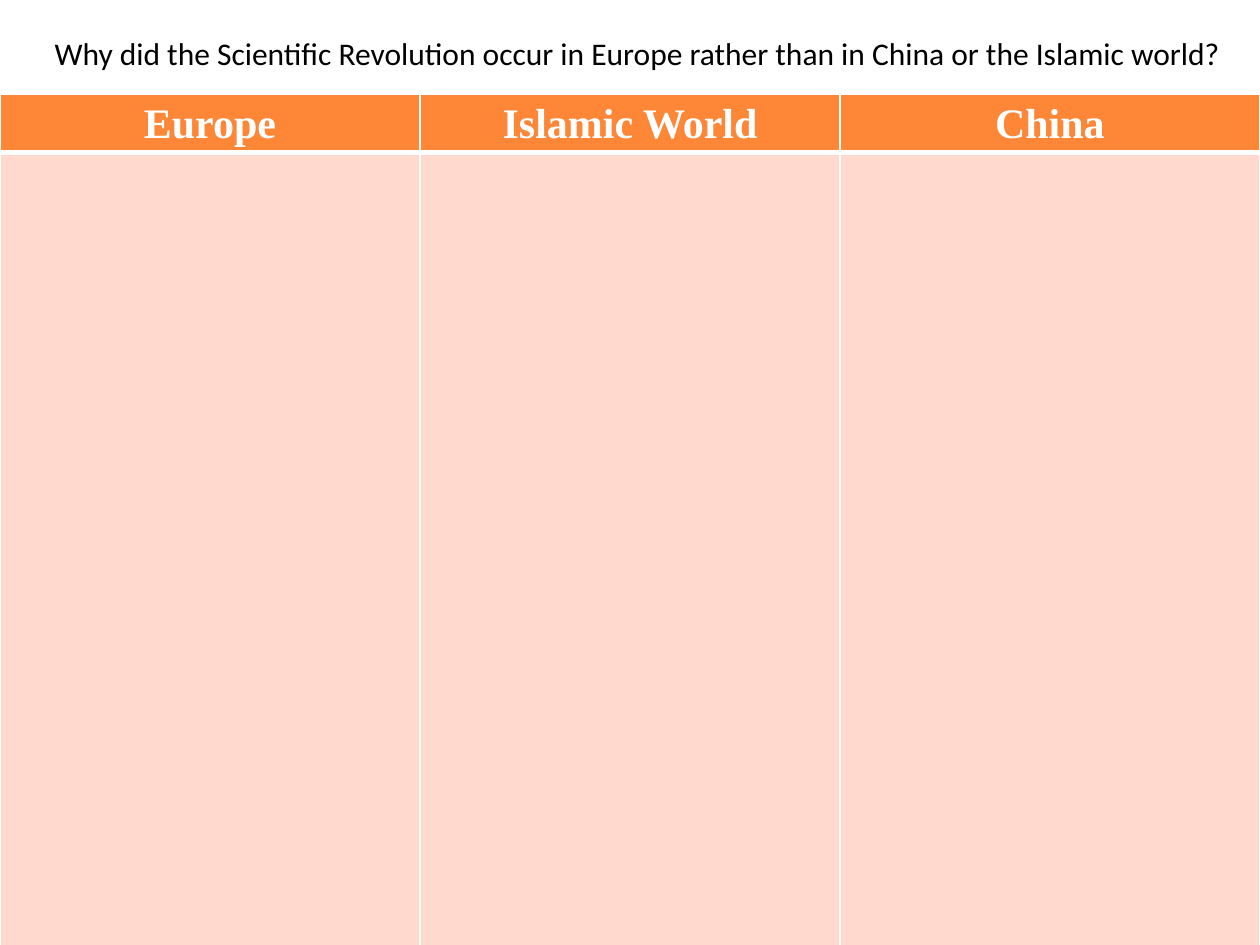
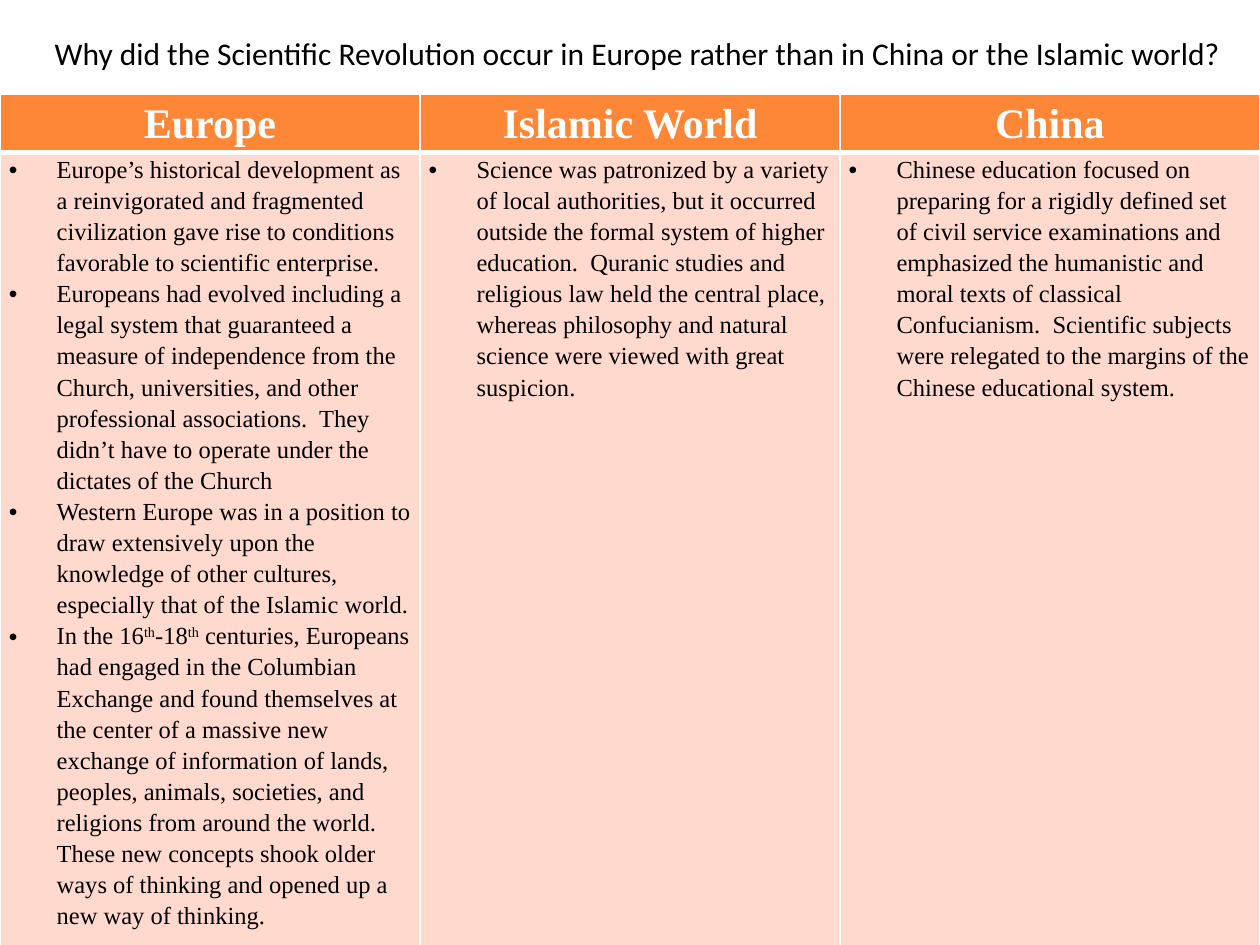
from lxml.etree import SubElement
from pptx import Presentation
from pptx.dml.color import RGBColor
from pptx.enum.text import MSO_ANCHOR, PP_ALIGN
from pptx.oxml.ns import qn
from pptx.util import Inches, Pt

# Content: text between ^ marks is superscript
TITLE = "Why did the Scientific Revolution occur in Europe rather than in China or the Islamic world?"
REGIONS = ["Europe", "Islamic World", "China"]
REASONS = [
    [
        "Europe’s historical development as a reinvigorated and fragmented civilization "
        "gave rise to conditions favorable to scientific enterprise.",
        "Europeans had evolved including a legal system that guaranteed a measure of "
        "independence from the Church, universities, and other professional associations.  "
        "They didn’t have to operate under the dictates of the Church",
        "Western Europe was in a position to draw extensively upon the knowledge of other "
        "cultures, especially that of the Islamic world.",
        "In the 16^th^-18^th^ centuries, Europeans had engaged in the Columbian Exchange and "
        "found themselves at the center of a massive new exchange of information of lands, "
        "peoples, animals, societies, and religions from around the world.  These new "
        "concepts shook older ways of thinking and opened up a new way of thinking.",
    ],
    [
        "Science was patronized by a variety of local authorities, but it occurred outside "
        "the formal system of higher education.  Quranic studies and religious law held the "
        "central place, whereas philosophy and natural science were viewed with great suspicion.",
    ],
    [
        "Chinese education focused on preparing for a rigidly defined set of civil service "
        "examinations and emphasized the humanistic and moral texts of classical "
        "Confucianism.  Scientific subjects were relegated to the margins of the Chinese "
        "educational system.",
    ],
]
SLIDES = [[[] for region in REGIONS], REASONS]

# Shared style
WHITE = RGBColor(0xFF, 0xFF, 0xFF)
BLACK = RGBColor(0x00, 0x00, 0x00)
ORANGE = RGBColor(0xFE, 0x86, 0x37)
PEACH = RGBColor(0xFF, 0xD9, 0xCE)
TITLE_FONT, TABLE_FONT = "Calibri", "Times New Roman"
SLIDE_WIDTH, SLIDE_HEIGHT = Inches(10), Inches(7.5)
TABLE_TOP, HEADER_HEIGHT, BODY_HEIGHT = Inches(0.75), Inches(0.46), Inches(6.98)
BULLET_INDENT = Inches(0.38)
THIN, THICK = Pt(1), Pt(3)


def set_font(paragraph, name, size, color, bold=False):
    font = paragraph.font
    font.name, font.size, font.bold = name, Pt(size), bold
    font.color.rgb = color


def style_cell(cell, fill, top, bottom):
    cell.margin_left = cell.margin_right = Inches(0.07)
    cell.margin_top = cell.margin_bottom = 0
    properties = cell._tc.get_or_add_tcPr()
    for side, width in (("L", THIN), ("R", THIN), ("T", top), ("B", bottom)):
        line = SubElement(properties, qn(f"a:ln{side}"), w=str(width))
        line_fill = SubElement(line, qn("a:solidFill"))
        SubElement(line_fill, qn("a:srgbClr"), val=str(WHITE))
    cell.fill.solid()
    cell.fill.fore_color.rgb = fill


def add_title(slide):
    box = slide.shapes.add_textbox(Inches(0.12), Inches(0.13), Inches(9.88), Inches(0.58))
    frame = box.text_frame
    frame.word_wrap = True
    frame.vertical_anchor = MSO_ANCHOR.MIDDLE
    paragraph = frame.paragraphs[0]
    paragraph.text = TITLE
    paragraph.alignment = PP_ALIGN.CENTER
    set_font(paragraph, TITLE_FONT, 18, BLACK)


def write_bullet(paragraph, text):
    for index, part in enumerate(text.split("^")):
        run = paragraph.add_run()
        run.text = part
        if index % 2:
            run._r.get_or_add_rPr().set("baseline", "30000")
    paragraph.line_spacing = 1.15
    properties = paragraph._p.get_or_add_pPr()
    properties.set("marL", str(BULLET_INDENT))
    properties.set("indent", str(-BULLET_INDENT))
    SubElement(properties, qn("a:buFont"), typeface="Arial")
    SubElement(properties, qn("a:buChar"), char="•")
    set_font(paragraph, TABLE_FONT, 14, BLACK)


def add_comparison(slide, reasons):
    frame = slide.shapes.add_table(2, len(REGIONS), 0, TABLE_TOP, SLIDE_WIDTH,
                                   HEADER_HEIGHT + BODY_HEIGHT)
    table = frame.table
    table.rows[0].height, table.rows[1].height = HEADER_HEIGHT, BODY_HEIGHT
    for column, (region, bullets) in enumerate(zip(REGIONS, reasons)):
        # Region heading
        header = table.cell(0, column)
        style_cell(header, ORANGE, THIN, THICK)
        paragraph = header.text_frame.paragraphs[0]
        paragraph.text = region
        paragraph.alignment = PP_ALIGN.CENTER
        paragraph.line_spacing = 1.15
        set_font(paragraph, TABLE_FONT, 24, WHITE, bold=True)

        # Reasons below it
        body = table.cell(1, column)
        style_cell(body, PEACH, THICK, THIN)
        for index, text in enumerate(bullets):
            text_frame = body.text_frame
            write_bullet(text_frame.add_paragraph() if index else text_frame.paragraphs[0], text)


def main():
    presentation = Presentation()
    presentation.slide_width, presentation.slide_height = SLIDE_WIDTH, SLIDE_HEIGHT
    for reasons in SLIDES:
        slide = presentation.slides.add_slide(presentation.slide_layouts[6])
        add_title(slide)
        add_comparison(slide, reasons)
    presentation.save("out.pptx")


if __name__ == "__main__":
    main()
